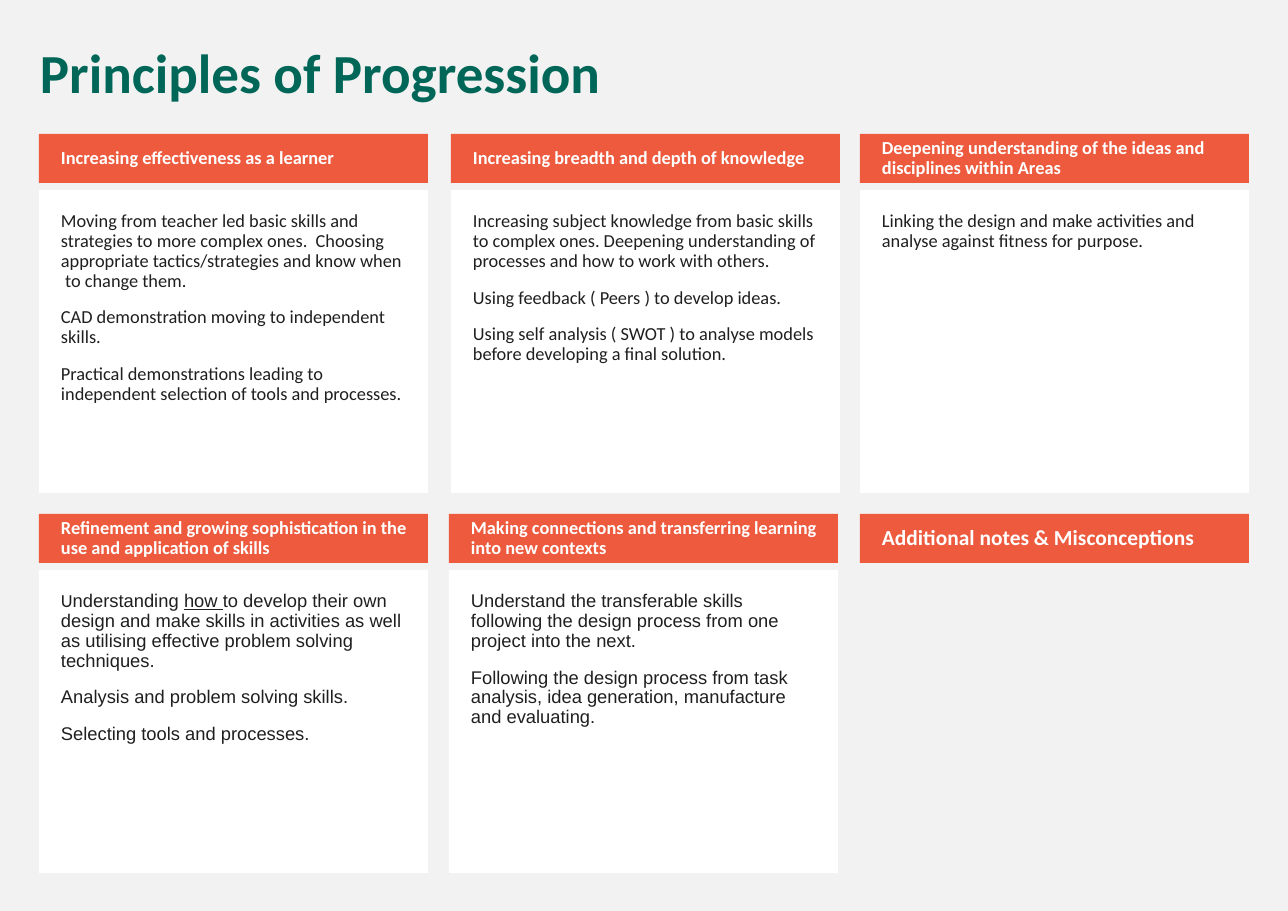
import pptx
import pptx.dml.color
import pptx.enum.shapes
import pptx.enum.text
import pptx.util

SLIDE_WIDTH, SLIDE_HEIGHT = 1288, 911
EMU_PER_PX = pptx.util.Inches(11.69) / SLIDE_WIDTH

GREY = pptx.dml.color.RGBColor(0xF2, 0xF2, 0xF2)
WHITE = pptx.dml.color.RGBColor(0xFF, 0xFF, 0xFF)
ORANGE = pptx.dml.color.RGBColor(0xED, 0x5A, 0x3E)
GREEN = pptx.dml.color.RGBColor(0x00, 0x67, 0x58)
INK = pptx.dml.color.RGBColor(0x1F, 0x1F, 0x1F)

TITLE = "Principles of Progression"

# Each card: heading, heading size, body font, body paragraphs.
# A paragraph is a string, or a list of (text, format) runs.
CARD_ROWS = [
    [
        ("Increasing effectiveness as a learner", 12, "Calibri", [
            "Moving from teacher led basic skills and strategies to more complex ones.  "
            "Choosing appropriate tactics/strategies and know when  to change them.",
            "CAD demonstration moving to independent skills.",
            "Practical demonstrations leading to independent selection of tools and processes.",
        ]),
        ("Increasing breadth and depth of knowledge", 12, "Calibri", [
            "Increasing subject knowledge from basic skills to complex ones. "
            "Deepening understanding of processes and how to work with others.",
            "Using feedback ( Peers ) to develop ideas.",
            "Using self analysis ( SWOT ) to analyse models before developing a final solution.",
        ]),
        ("Deepening understanding of the ideas and disciplines within Areas", 12, "Calibri", [
            "Linking the design and make activities and analyse against fitness for purpose.",
        ]),
    ],
    [
        ("Refinement and growing sophistication in the use and application of skills", 12, "Arial", [
            [
                ("U", {"font": "Calibri"}),
                ("nderstanding ", {}),
                ("how ", {"underline": True}),
                ("to develop their own design and make skills in activities as well "
                 "as utilising effective problem solving techniques.", {}),
            ],
            "Analysis and problem solving skills.",
            "Selecting tools and processes.",
        ]),
        ("Making connections and transferring learning into new contexts", 12, "Arial", [
            "Understand the transferable skills following the design process from "
            "one project into the next.",
            "Following the design process from task analysis, idea generation, "
            "manufacture and evaluating.",
        ]),
        ("Additional notes & Misconceptions", 14, "Calibri", []),
    ],
]

ROW_TOPS = (134, 514)
ROW_LEFTS = ((39, 451, 860), (39, 449, 860))
CARD_WIDTH = 389
HEADING_HEIGHT = 49
BODY_OFFSET, BODY_HEIGHT = 56, 303
HEADING_INSETS = (22, 6, 11, 6)
BODY_INSETS = (22, 22, 22, 22)
TITLE_BOX = (29, 40, 1221, 72)
TITLE_INSETS = (11, 6, 11, 6)


def px(length):
    return pptx.util.Emu(round(length * EMU_PER_PX))


def add_panel(slide, box, fill):
    shape = slide.shapes.add_shape(
        pptx.enum.shapes.MSO_SHAPE.RECTANGLE, *map(px, box))
    shape.shadow.inherit = False
    shape.fill.solid()
    shape.fill.fore_color.rgb = fill
    shape.line.fill.background()
    return shape


def set_text(shape, paragraphs, *, insets, color, size=12, font="Calibri",
             bold=False, middle=False):
    anchor = pptx.enum.text.MSO_ANCHOR
    frame = shape.text_frame
    frame.word_wrap = True
    frame.vertical_anchor = anchor.MIDDLE if middle else anchor.TOP
    (frame.margin_left, frame.margin_top,
     frame.margin_right, frame.margin_bottom) = map(px, insets)
    for index, content in enumerate(paragraphs):
        paragraph = frame.add_paragraph() if index else frame.paragraphs[0]
        paragraph.alignment = pptx.enum.text.PP_ALIGN.LEFT
        paragraph.line_spacing = 0.9
        paragraph.space_before = pptx.util.Pt(11)
        runs = [(content, {})] if isinstance(content, str) else content
        for text, changes in runs:
            run = paragraph.add_run()
            run.text = text
            run.font.name = changes.get("font", font)
            run.font.size = pptx.util.Pt(size)
            run.font.bold = bold
            run.font.underline = changes.get("underline", False)
            run.font.color.rgb = color


def add_card(slide, left, top, card):
    heading, heading_size, body_font, paragraphs = card
    if paragraphs:
        body = add_panel(
            slide, (left, top + BODY_OFFSET, CARD_WIDTH, BODY_HEIGHT), WHITE)
        set_text(body, paragraphs, insets=BODY_INSETS, color=INK, font=body_font)
    header = add_panel(slide, (left, top, CARD_WIDTH, HEADING_HEIGHT), ORANGE)
    set_text(header, [heading], insets=HEADING_INSETS, color=WHITE,
             size=heading_size, bold=True, middle=True)


def main():
    presentation = pptx.Presentation()
    presentation.slide_width = px(SLIDE_WIDTH)
    presentation.slide_height = px(SLIDE_HEIGHT)
    slide = presentation.slides.add_slide(presentation.slide_layouts[6])
    slide.background.fill.solid()
    slide.background.fill.fore_color.rgb = GREY

    title = slide.shapes.add_textbox(*map(px, TITLE_BOX))
    set_text(title, [TITLE], insets=TITLE_INSETS, color=GREEN, size=36, bold=True)

    for top, lefts, cards in zip(ROW_TOPS, ROW_LEFTS, CARD_ROWS):
        for left, card in zip(lefts, cards):
            add_card(slide, left, top, card)

    presentation.save("out.pptx")


if __name__ == "__main__":
    main()
